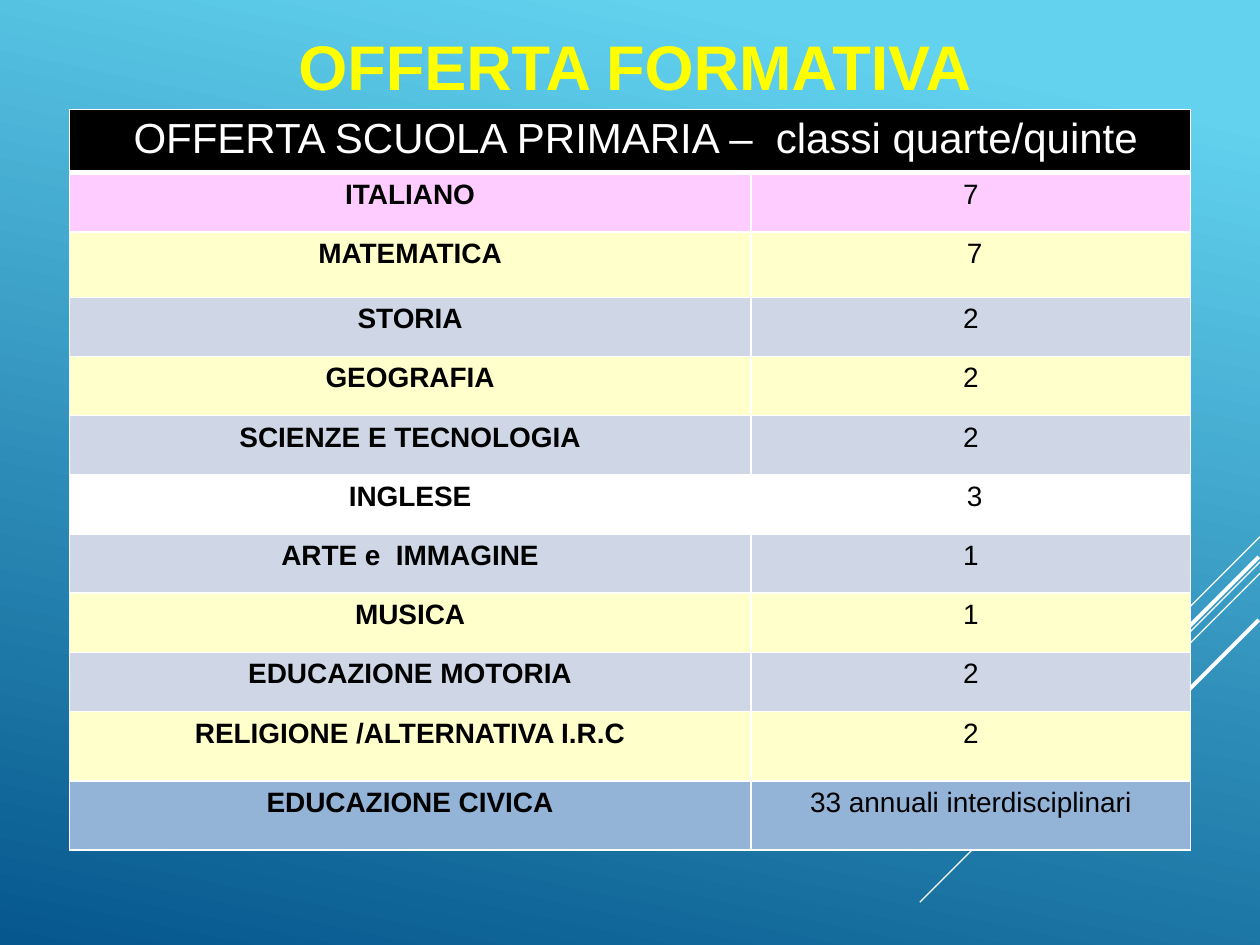
import pptx
import pptx.dml.color
import pptx.enum.shapes
import pptx.enum.text
import pptx.oxml
import pptx.oxml.ns
import pptx.util
from pptx.util import Inches

FONT = "Arial"
WHITE, BLACK, YELLOW = "FFFFFF", "000000", "FFFF00"
PINK, CREAM, GREY_BLUE, BLUE = "FFCCFF", "FFFFCC", "CFD7E7", "93B3D7"

HEADING = " OFFERTA SCUOLA PRIMARIA –  classi quarte/quinte"
HEADING_HEIGHT = 0.5
ROW_HEIGHT = 0.47
# subject, weekly hours, fill, row height
SUBJECTS = [
    ("ITALIANO", "7", PINK, ROW_HEIGHT),
    ("MATEMATICA", " 7", CREAM, 0.52),
    ("STORIA", "2", GREY_BLUE, ROW_HEIGHT),
    ("GEOGRAFIA", "2", CREAM, ROW_HEIGHT),
    ("SCIENZE E TECNOLOGIA", "2", GREY_BLUE, ROW_HEIGHT),
    ("INGLESE", " 3", WHITE, ROW_HEIGHT),
    ("ARTE e  IMMAGINE", "1", GREY_BLUE, ROW_HEIGHT),
    ("MUSICA", "1", CREAM, ROW_HEIGHT),
    ("EDUCAZIONE MOTORIA", "2", GREY_BLUE, ROW_HEIGHT),
    ("RELIGIONE /ALTERNATIVA I.R.C", "2", CREAM, 0.55),
    ("EDUCAZIONE CIVICA", "33 annuali interdisciplinari", BLUE, 0.55),
]
# right end x, y, run to the lower left, width in points
DIAGONALS = [
    (10, 4.26, 0.83, 0.75),
    (10, 4.46, 2.7, 0.75),
    (10, 4.55, 1.72, 0.75),
    (9.99, 4.42, 1.57, 2.25),
    (9.99, 4.92, 1.14, 2.25),
]


def rgb(hex_colour):
    return pptx.dml.color.RGBColor.from_string(hex_colour)


def write(frame, text, size, colour=BLACK, bold=False):
    paragraph = frame.paragraphs[0]
    paragraph.alignment = pptx.enum.text.PP_ALIGN.CENTER
    run = paragraph.add_run()
    run.text = text
    run.font.name = FONT
    run.font.size = pptx.util.Pt(size)
    run.font.bold = bold
    run.font.color.rgb = rgb(colour)


def paint_background(slide):
    fill = slide.background.fill
    fill.gradient()
    fill.gradient_angle = 258
    stops = [(0.1, "62D2EF"), (1, "05578D")]
    for stop, (position, colour) in zip(fill.gradient_stops, stops):
        stop.position = position
        stop.color.rgb = rgb(colour)


def add_diagonals(slide):
    for x, y, run, width in DIAGONALS:
        line = slide.shapes.add_connector(
            pptx.enum.shapes.MSO_CONNECTOR.STRAIGHT,
            Inches(x), Inches(y), Inches(x - run), Inches(y + run))
        line.line.color.rgb = rgb(WHITE)
        line.line.width = pptx.util.Pt(width)
        properties = line._element.spPr
        properties.append(properties.makeelement(pptx.oxml.ns.qn("a:effectLst"), {}))


def place_title(slide, left, top, width, height):
    title = slide.shapes.title
    title.left, title.top = Inches(left), Inches(top)
    title.width, title.height = Inches(width), Inches(height)
    frame = title.text_frame
    frame.word_wrap = True
    frame.auto_size = pptx.enum.text.MSO_AUTO_SIZE.NONE
    frame.vertical_anchor = pptx.enum.text.MSO_ANCHOR.TOP
    write(frame, "OFFERTA FORMATIVA ", 36, YELLOW, bold=True)


def set_borders(cell, top=1, bottom=1):
    """Draw white borders, with widths in points."""
    properties = cell._tc.get_or_add_tcPr()
    widths = {"lnL": 1, "lnR": 1, "lnT": top, "lnB": bottom}
    for index, (side, width) in enumerate(widths.items()):
        border = pptx.oxml.parse_xml(
            f'<a:{side} {pptx.oxml.ns.nsdecls("a")} w="{pptx.util.Pt(width)}">'
            f'<a:solidFill><a:srgbClr val="{WHITE}"/></a:solidFill></a:{side}>')
        properties.insert(index, border)


def style_cell(cell, fill, **borders):
    cell.fill.solid()
    cell.fill.fore_color.rgb = rgb(fill)
    set_borders(cell, **borders)


def add_timetable(slide, left, top, column_widths):
    heights = [HEADING_HEIGHT] + [subject[3] for subject in SUBJECTS]
    table = slide.shapes.add_table(
        len(heights), len(column_widths), Inches(left), Inches(top),
        Inches(sum(column_widths)), Inches(sum(heights))).table
    table.first_row = table.horz_banding = False
    for column, width in zip(table.columns, column_widths):
        column.width = Inches(width)
    for row, height in zip(table.rows, heights):
        row.height = Inches(height)

    heading = table.cell(0, 0)
    heading.merge(table.cell(0, 1))
    for cell in table.rows[0].cells:
        style_cell(cell, BLACK, bottom=3)
    write(heading.text_frame, HEADING, 24, WHITE)

    for index, (subject, hours, fill, _) in enumerate(SUBJECTS, start=1):
        for column, text in enumerate((subject, hours)):
            cell = table.cell(index, column)
            style_cell(cell, fill, top=3 if index == 1 else 1)
            write(cell.text_frame, text, 16, bold=column == 0)


def main():
    deck = pptx.Presentation()
    deck.slide_width, deck.slide_height = Inches(10), Inches(7.5)
    slide = deck.slides.add_slide(deck.slide_layouts[5])
    paint_background(slide)
    add_diagonals(slide)
    place_title(slide, 0.84, 0.17, 8.52, 2.12)
    add_timetable(slide, 0.55, 0.87, (5.41, 3.49))
    deck.save("out.pptx")


if __name__ == "__main__":
    main()
